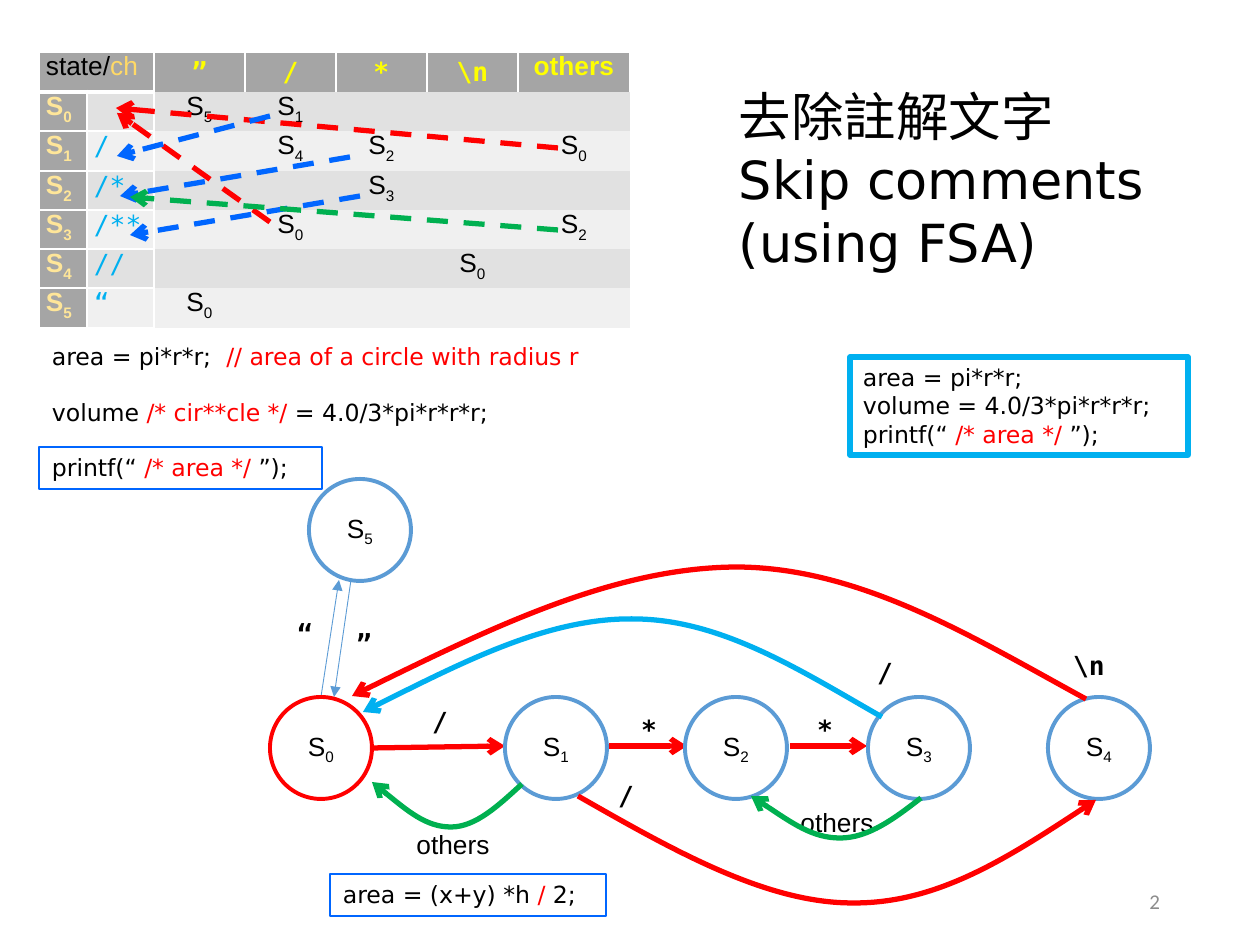
from dataclasses import dataclass
from typing import NamedTuple

from lxml import etree
from pptx import Presentation
from pptx.dml.color import RGBColor
from pptx.enum.dml import MSO_LINE
from pptx.enum.shapes import MSO_CONNECTOR, MSO_SHAPE
from pptx.enum.text import MSO_ANCHOR, MSO_AUTO_SIZE, PP_ALIGN
from pptx.oxml.ns import qn
from pptx.util import Emu, Pt

LEFT, CENTER, RIGHT = PP_ALIGN.LEFT, PP_ALIGN.CENTER, PP_ALIGN.RIGHT
TOP, MIDDLE = MSO_ANCHOR.TOP, MSO_ANCHOR.MIDDLE
STRAIGHT, DASH = MSO_CONNECTOR.STRAIGHT, MSO_LINE.DASH
OVAL, RECTANGLE = MSO_SHAPE.OVAL, MSO_SHAPE.RECTANGLE
PX = 914400 / 126
NO_STYLE = "{2D5ABB26-0587-4C30-8999-92F81FD0307C}"


@dataclass(frozen=True)
class Theme:
    black: str = "000000"
    white: str = "FFFFFF"
    red: str = "FF0000"
    green: str = "00B050"
    blue: str = "0066FF"
    cyan: str = "00B0F0"
    steel: str = "5B9BD5"
    yellow: str = "FFFF00"
    gold: str = "FFD966"
    cream: str = "FFE699"
    header: str = "A5A5A5"
    bands: tuple[str, str] = ("E1E1E1", "F0F0F0")
    muted: str = "8C8C8C"
    sans: str = "Arial"
    code: str = "DejaVu Sans"
    mono: str = "DejaVu Sans Mono"
    footer: str = "Calibri"
    title_size: float = 30
    label_size: float = 15
    code_size: float = 13.5
    footer_size: float = 12


THEME = Theme()


class Span(NamedTuple):
    text: str
    color: str = THEME.black
    font: str = THEME.sans
    bold: bool = False
    subscript: bool = False


class Box(NamedTuple):
    x: int
    y: int
    w: int
    h: int


class Point(NamedTuple):
    x: int
    y: int


class Arrow(NamedTuple):
    start: Point
    end: Point
    color: str
    width: float = 3
    head: str = "arrow"


class Snippet(NamedTuple):
    box: Box
    lines: list[list[Span]]
    border: str | None = None
    width: float = 0.75


def px(length: float) -> Emu:
    return Emu(round(length * PX))


def rgb(color: str) -> RGBColor:
    return RGBColor.from_string(color)


def state(number: int, color: str = THEME.black, bold: bool = False) -> list[Span]:
    return [Span("S", color, bold=bold), Span(str(number), color, bold=bold, subscript=True)]


def code(text: str, color: str = THEME.black) -> Span:
    return Span(text, color, THEME.code)


def write(frame, lines: list[list[Span]], size: float, align=LEFT) -> None:
    for index, spans in enumerate(lines):
        paragraph = frame.add_paragraph() if index else frame.paragraphs[0]
        paragraph.alignment = align
        for span in spans:
            run = paragraph.add_run()
            run.text = span.text
            run.font.name, run.font.size, run.font.bold = span.font, Pt(size), span.bold
            run.font.color.rgb = rgb(span.color)
            if span.subscript:
                run.font._element.set("baseline", "-25000")


def set_frame(frame, inset: tuple[int, int], anchor=TOP) -> None:
    frame.word_wrap = True
    frame.auto_size = MSO_AUTO_SIZE.NONE
    frame.vertical_anchor = anchor
    frame.margin_left = frame.margin_right = px(inset[0])
    frame.margin_top = frame.margin_bottom = px(inset[1])


def add_text(slide, box: Box, lines: list[list[Span]], size: float, align=LEFT,
             inset: tuple[int, int] = (13, 6), anchor=TOP) -> None:
    frame = slide.shapes.add_textbox(*map(px, box)).text_frame
    set_frame(frame, inset, anchor)
    write(frame, lines, size, align)


def add_outlined(slide, kind, box: Box, lines: list[list[Span]], color: str, width: float,
                 size: float, align=LEFT, inset: tuple[int, int] = (13, 6), anchor=TOP) -> None:
    shape = slide.shapes.add_shape(kind, *map(px, box))
    shape.shadow.inherit = False
    shape.fill.background()
    shape.line.color.rgb, shape.line.width = rgb(color), Pt(width)
    set_frame(shape.text_frame, inset, anchor)
    write(shape.text_frame, lines, size, align)


def style_arrow(line, color: str, width: float, head: str) -> None:
    line.color.rgb, line.width = rgb(color), Pt(width)
    etree.SubElement(line._get_or_add_ln(), qn("a:tailEnd"), type=head)


def add_arrow(slide, arrow: Arrow, dashed: bool = False) -> None:
    connector = slide.shapes.add_connector(STRAIGHT, *map(px, arrow.start + arrow.end))
    etree.SubElement(connector._element.spPr, qn("a:effectLst"))
    if dashed:
        connector.line.dash_style = DASH
    style_arrow(connector.line, arrow.color, arrow.width, arrow.head)


def add_curve(slide, color: str, points: list[tuple[int, int]]) -> None:
    builder = slide.shapes.build_freeform(*points[0], scale=PX)
    builder.add_line_segments(points[1:], close=False)
    shape = builder.convert_to_shape()
    shape.shadow.inherit = False
    shape.fill.background()
    segments = list(shape._element.iter(qn("a:lnTo")))
    outline = segments[0].getparent()
    for first in range(0, len(segments), 3):
        bezier = etree.SubElement(outline, qn("a:cubicBezTo"))
        for segment in segments[first:first + 3]:
            bezier.append(segment[0])
            outline.remove(segment)
    style_arrow(shape.line, color, 3, "arrow")


def style_cell(cell, spans: list[Span], fill: str, borders: dict[str, int], align, anchor=TOP) -> None:
    cell.margin_left = cell.margin_right = px(7)
    cell.margin_top = cell.margin_bottom = 0
    cell.vertical_anchor = anchor
    for side, width in borders.items():
        edge = etree.SubElement(cell._tc.get_or_add_tcPr(), qn(f"a:ln{side}"), w=str(Pt(width)))
        etree.SubElement(etree.SubElement(edge, qn("a:solidFill")), qn("a:srgbClr"), val=THEME.white)
    cell.fill.solid()
    cell.fill.fore_color.rgb = rgb(fill)
    write(cell.text_frame, [spans], THEME.label_size, align)
    if not spans:
        etree.SubElement(cell.text_frame.paragraphs[0]._p, qn("a:endParaRPr"),
                         sz=str(round(THEME.label_size * 100)))


def add_transition_table(slide) -> None:
    widths, heights = (48, 67, 91, 91, 91, 91, 112), (40, 39, 40, 39, 39, 39, 40)
    inputs = ["”", "/", "*", "\\n", "others"]
    prefixes = ["", "/", "/*", "/**", "//", "“"]
    targets = [{"”": 5, "/": 1}, {"/": 4, "*": 2, "others": 0}, {"*": 3},
               {"/": 0, "others": 2}, {"\\n": 0}, {"”": 0}]
    table = slide.shapes.add_table(7, 7, px(39), px(52), px(sum(widths)), px(sum(heights))).table
    table._tbl.tblPr.find(qn("a:tableStyleId")).text = NO_STYLE
    table.first_row = table.horz_banding = False
    for column, width in zip(table.columns, widths):
        column.width = px(width)
    for row, height in zip(table.rows, heights):
        row.height = px(height)
    table.cell(0, 0).merge(table.cell(0, 1))
    style_cell(table.cell(0, 0), [Span("state/"), Span("ch", THEME.gold)], THEME.header,
               {"L": 1, "R": 1, "T": 1, "B": 3}, LEFT)
    for column, symbol in enumerate(inputs, 2):
        word = symbol == "others"
        style_cell(table.cell(0, column),
                   [Span(symbol, THEME.yellow, THEME.sans if word else THEME.mono, True)],
                   THEME.header, {"L": 1, "R": 1, "T": 1}, CENTER, TOP if word else MIDDLE)
    for number, (prefix, moves) in enumerate(zip(prefixes, targets)):
        row, band = number + 1, THEME.bands[number % 2]
        style_cell(table.cell(row, 0), state(number, THEME.cream, True), THEME.header,
                   {"L": 1, "R": 1, "T": 1, "B": 1}, LEFT)
        style_cell(table.cell(row, 1), [Span(prefix, THEME.cyan, THEME.mono)] if prefix else [],
                   band, {"L": 1, "T": 1, "B": 1}, LEFT)
        for column, symbol in enumerate(inputs, 2):
            style_cell(table.cell(row, column), state(moves[symbol]) if symbol in moves else [],
                       band, {}, CENTER)


def main() -> None:
    deck = Presentation()
    deck.slide_width, deck.slide_height = px(1260), px(945)
    slide = deck.slides.add_slide(deck.slide_layouts[5])
    title = slide.shapes.title
    title.left, title.top, title.width, title.height = map(px, Box(726, 78, 436, 204))
    set_frame(title.text_frame, (13, 6))
    write(title.text_frame, [[code(line)] for line in ("去除註解文字", "Skip comments", "(using FSA)")],
          THEME.title_size)

    for arrow in (Arrow(Point(372, 748), Point(505, 746), THEME.red),
                  Arrow(Point(609, 746), Point(687, 746), THEME.red),
                  Arrow(Point(790, 746), Point(867, 746), THEME.red),
                  Arrow(Point(321, 697), Point(339, 580), THEME.steel, 0.5, "triangle"),
                  Arrow(Point(351, 580), Point(334, 697), THEME.steel, 0.5, "triangle")):
        add_arrow(slide, arrow)
    state_spots = [(270, 697), (505, 697), (685, 697), (868, 697), (1048, 697), (309, 479)]
    for number, spot in enumerate(state_spots):
        add_outlined(slide, OVAL, Box(*spot, 102, 102), [state(number)],
                     THEME.steel if number else THEME.red, 2.25, THEME.label_size,
                     CENTER, (9, 5), MIDDLE)
    for symbol, x, y in (("/", 402, 690), ("”", 326, 612), ("/", 588, 764), ("“", 267, 602),
                         ("\\n", 1051, 634), ("/", 847, 641), ("*", 611, 698), ("*", 787, 698)):
        add_text(slide, Box(x, y, 76, 63), [[Span(symbol, font=THEME.mono, bold=True)]],
                 THEME.label_size, CENTER, (0, 0), MIDDLE)
    for x, y in ((792, 791), (408, 813)):
        add_text(slide, Box(x, y, 90, 63), [[Span("others")]], THEME.label_size, CENTER, (0, 0), MIDDLE)
    for color, points in (
        (THEME.red, [(578, 796), (671, 849), (765, 903), (852, 903), (937, 904), (1017, 852), (1096, 800)]),
        (THEME.green, [(921, 798), (895, 818), (869, 838), (840, 838), (812, 838), (782, 816), (751, 796)]),
        (THEME.green, [(522, 784), (499, 805), (476, 827), (451, 827), (426, 827), (399, 804), (372, 782)]),
        (THEME.red, [(1086, 699), (974, 638), (862, 568), (738, 567), (616, 567), (484, 631), (352, 696)]),
        (THEME.cyan, [(882, 717), (803, 672), (723, 620), (636, 619), (551, 617), (457, 665), (363, 712)]),
    ):
        add_curve(slide, color, points)

    add_transition_table(slide)
    for arrow in (Arrow(Point(350, 157), Point(120, 196), THEME.blue),
                  Arrow(Point(360, 196), Point(130, 235), THEME.blue),
                  Arrow(Point(270, 222), Point(117, 113), THEME.red),
                  Arrow(Point(558, 230), Point(130, 197), THEME.green),
                  Arrow(Point(558, 148), Point(116, 108), THEME.red),
                  Arrow(Point(270, 116), Point(117, 156), THEME.blue)):
        add_arrow(slide, arrow, dashed=True)

    printed = [code("printf(“ "), code("/* area */ ", THEME.red), code("”);")]
    for box, lines, border, width in (
        Snippet(Box(39, 336, 581, 42),
                [[code("area = pi*r*r;  "), code("// area of a circle with radius r", THEME.red)]]),
        Snippet(Box(39, 392, 508, 42),
                [[code("volume "), code("/* cir**cle */ ", THEME.red), code("= 4.0/3*pi*r*r*r;")]]),
        Snippet(Box(39, 447, 283, 42), [printed], THEME.blue),
        Snippet(Box(850, 357, 338, 98),
                [[code("area = pi*r*r;")], [code("volume = 4.0/3*pi*r*r*r;")], printed], THEME.cyan, 3),
        Snippet(Box(330, 874, 276, 42),
                [[code("area = (x+y) *h "), code("/", THEME.red), code(" 2;")]], THEME.blue),
    ):
        if border:
            add_outlined(slide, RECTANGLE, box, lines, border, width, THEME.code_size)
        else:
            add_text(slide, box, lines, THEME.code_size)
    add_text(slide, Box(890, 876, 283, 50), [[Span("2", THEME.muted, THEME.footer)]],
             THEME.footer_size, RIGHT, anchor=MIDDLE)
    deck.save("out.pptx")


if __name__ == "__main__":
    main()
